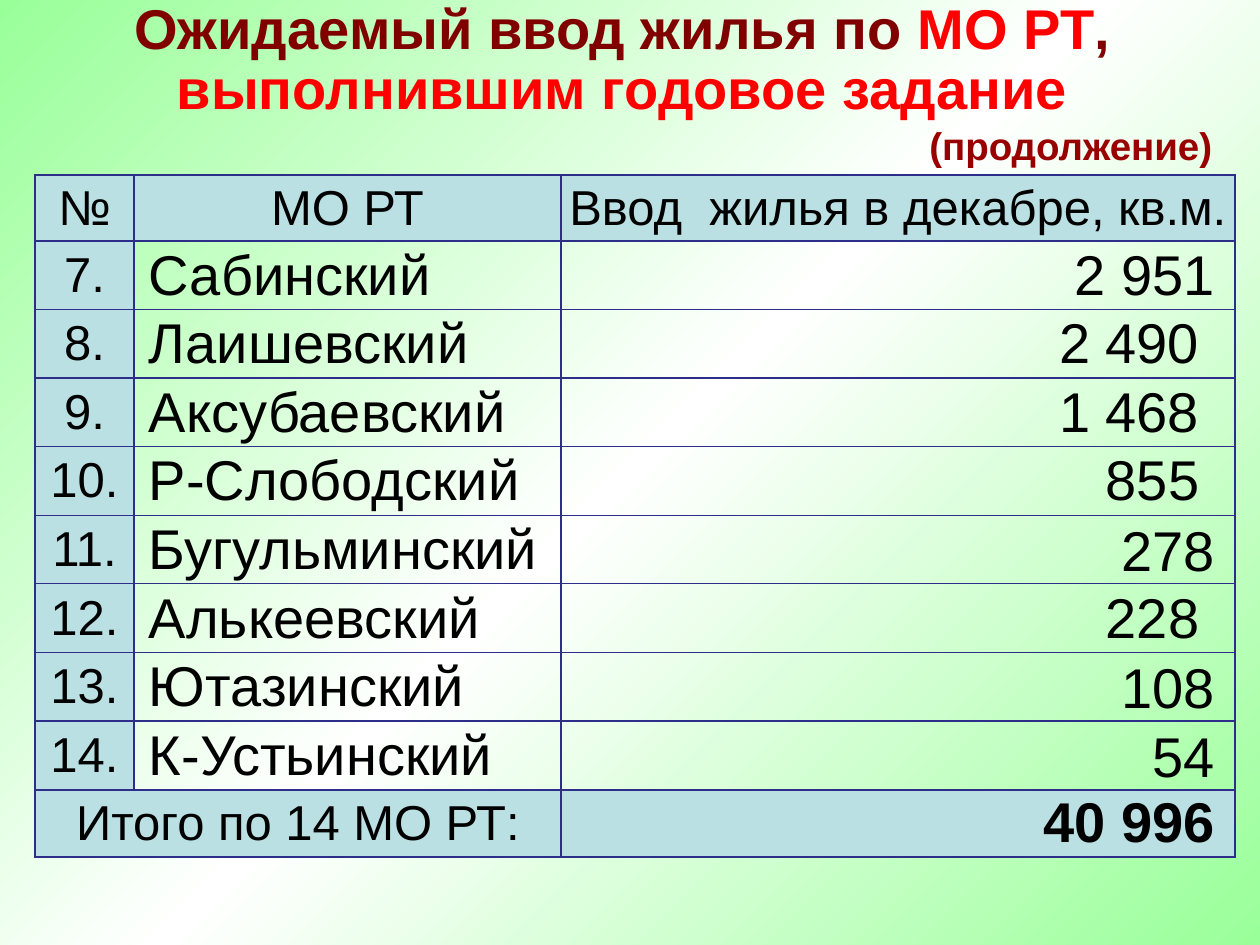
"""Build a slide with the expected housing completions by municipality."""
from copy import deepcopy

from lxml import etree
from pptx import Presentation
from pptx.dml.color import RGBColor
from pptx.enum.text import MSO_ANCHOR, PP_ALIGN
from pptx.oxml.ns import qn
from pptx.util import Pt

LEFT, CENTER, RIGHT = PP_ALIGN.LEFT, PP_ALIGN.CENTER, PP_ALIGN.RIGHT
TOP, MIDDLE, BOTTOM = MSO_ANCHOR.TOP, MSO_ANCHOR.MIDDLE, MSO_ANCHOR.BOTTOM
PX = 914400 // 126
MAROON, RED, DARK_RED, BLACK = "800000", "FF0000", "990000", "000000"
HEAD_FILL, BORDER = "BBE0E3", "2D2D8A"
BACKGROUND = [(0, "99FF99"), (0.5, "FFFFFF"), (1, "99FF99")]

TITLE = [
    [("Ожидаемый ввод жилья по ", MAROON), ("МО РТ", RED), (", ", MAROON)],
    [("выполнившим годовое задание ", RED)],
]
CONTINUED = "(продолжение)"
HEADER = ["№", "МО РТ", "Ввод  жилья в декабре, кв.м."]
DISTRICTS = [
    ("7.", "Сабинский", "2 951", MIDDLE),
    ("8.", "Лаишевский", "2 490 ", MIDDLE),
    ("9.", "Аксубаевский", "1 468 ", MIDDLE),
    ("10.", "Р-Слободский", "855 ", MIDDLE),
    ("11.", "Бугульминский", "278", BOTTOM),
    ("12.", "Алькеевский", "228 ", MIDDLE),
    ("13.", "Ютазинский", "108", BOTTOM),
    ("14.", "К-Устьинский", "54", BOTTOM),
]
TOTAL = ("Итого по 14 МО РТ:", "40 996")

COLUMNS = [99, 427, 674]
ROWS = [66] + [68, 69] * 4 + [66]
HEAD = dict(size=28, align=CENTER, fill=HEAD_FILL, margins=(5, 0, 5, 0))
NUMBER = dict(size=28, align=CENTER, fill=HEAD_FILL, margins=(0, 0, 0, 0))
NAME = dict(size=32, align=LEFT, margins=(15, 1, 20, 0))
VALUE = dict(NAME, align=RIGHT)
SUM = dict(size=32, align=RIGHT, bold=True, fill=HEAD_FILL, margins=(0, 0, 20, 0))


def color(value):
    return RGBColor.from_string(value)


def apply(target, **values):
    for name, value in values.items():
        setattr(target, name, value)


def add_span(para, text, size, shade, bold=False):
    span = para.add_run()
    span.text = text
    apply(span.font, name="Arial", size=Pt(size), bold=bold)
    span.font.color.rgb = color(shade)


def add_box(slide, left, top, width, height):
    box = slide.shapes.add_textbox(*(n * PX for n in (left, top, width, height)))
    apply(box.text_frame, word_wrap=True, vertical_anchor=TOP)
    return box.text_frame


def paint_background(slide):
    fill = slide.background.fill
    fill.gradient()
    fill.gradient_angle = 315
    stops = fill.gradient_stops
    for stop, (position, shade) in zip((stops[0], stops[1]), BACKGROUND[::2]):
        stop.position = position
        stop.color.rgb = color(shade)
    stop_list = slide.background._cSld.find(".//" + qn("a:gsLst"))
    stop_list.insert(1, deepcopy(stop_list[0]))
    middle = fill.gradient_stops[1]
    middle.position = BACKGROUND[1][0]
    middle.color.rgb = color(BACKGROUND[1][1])


def add_borders(cell):
    properties = cell._tc.get_or_add_tcPr()
    for index, side in enumerate(("lnL", "lnR", "lnT", "lnB")):
        line = etree.Element(qn("a:" + side), w=str(Pt(1)))
        solid = etree.SubElement(line, qn("a:solidFill"))
        etree.SubElement(solid, qn("a:srgbClr"), val=BORDER)
        properties.insert(index, line)


def fill_cell(cell, text, size, align, margins, fill=None, bold=False, anchor=MIDDLE):
    left, top, right, bottom = (n * PX for n in margins)
    apply(cell, margin_left=left, margin_top=top, margin_right=right,
          margin_bottom=bottom, vertical_anchor=anchor)
    if fill:
        cell.fill.solid()
        cell.fill.fore_color.rgb = color(fill)
    else:
        cell.fill.background()
    para = cell.text_frame.paragraphs[0]
    para.alignment = align
    add_span(para, text, size, BLACK, bold)


def add_title(slide):
    frame = add_box(slide, 0, 19, 1260, 107)
    for index, spans in enumerate(TITLE):
        para = frame.paragraphs[0] if index == 0 else frame.add_paragraph()
        apply(para, alignment=CENTER, line_spacing=0.45, space_before=Pt(17))
        for text, shade in spans:
            add_span(para, text, 32, shade, True)


def add_district_table(slide):
    frame = slide.shapes.add_table(len(ROWS), len(COLUMNS), 35 * PX, 175 * PX,
                                   sum(COLUMNS) * PX, sum(ROWS) * PX)
    table = frame.table
    apply(table, first_row=False, horz_banding=False)
    for column, width in zip(table.columns, COLUMNS):
        column.width = width * PX
    for row, height in zip(table.rows, ROWS):
        row.height = height * PX
    for index, text in enumerate(HEADER):
        fill_cell(table.cell(0, index), text, **HEAD)
    for index, (number, name, value, anchor) in enumerate(DISTRICTS, 1):
        fill_cell(table.cell(index, 0), number, **NUMBER)
        fill_cell(table.cell(index, 1), name, **NAME)
        fill_cell(table.cell(index, 2), value, anchor=anchor, **VALUE)
    last = len(ROWS) - 1
    table.cell(last, 0).merge(table.cell(last, 1))
    fill_cell(table.cell(last, 0), TOTAL[0], **NUMBER)
    fill_cell(table.cell(last, 2), TOTAL[1], **SUM)
    for cell in table.iter_cells():
        add_borders(cell)


def main():
    deck = Presentation()
    apply(deck, slide_width=1260 * PX, slide_height=945 * PX)
    slide = deck.slides.add_slide(deck.slide_layouts[6])
    paint_background(slide)
    add_title(slide)
    add_district_table(slide)
    note = add_box(slide, 917, 116, 318, 59)
    add_span(note.paragraphs[0], CONTINUED, 22, DARK_RED, True)
    deck.save("out.pptx")


if __name__ == "__main__":
    main()
